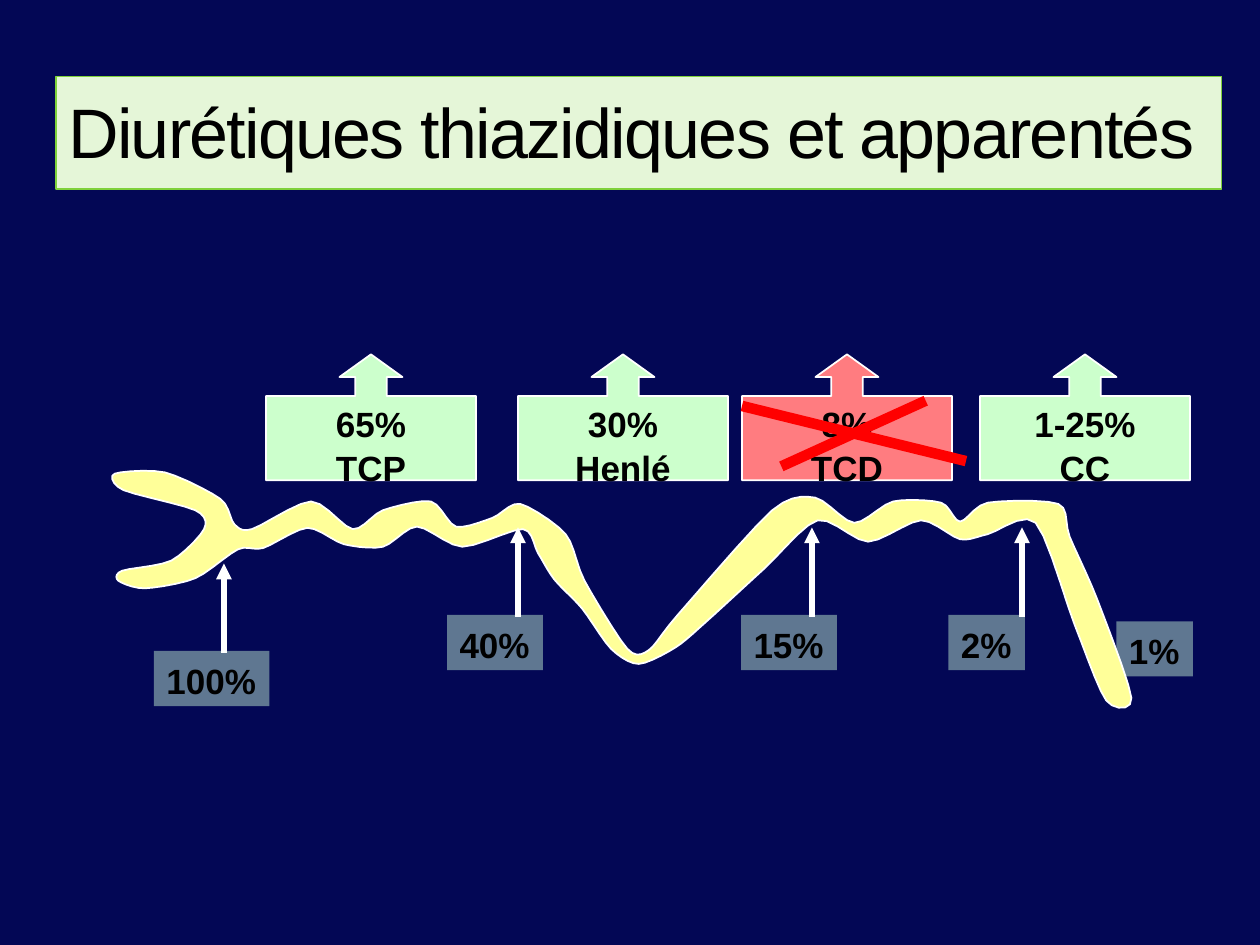
from lxml import etree
from pptx import Presentation
from pptx.dml.color import RGBColor
from pptx.enum.shapes import MSO_CONNECTOR, MSO_SHAPE
from pptx.enum.text import MSO_ANCHOR, PP_ALIGN
from pptx.oxml.ns import qn
from pptx.util import Pt

RECTANGLE = MSO_SHAPE.RECTANGLE
CALLOUT = MSO_SHAPE.UP_ARROW_CALLOUT
STRAIGHT = MSO_CONNECTOR.STRAIGHT
LEFT, CENTER = PP_ALIGN.LEFT, PP_ALIGN.CENTER
TOP = MSO_ANCHOR.TOP

COLORS = {
    "background": "030755", "reabsorbed": "CCFFCC", "blocked": "FF7C80",
    "label": "5F7791", "tubule": "FFFF99", "white": "FFFFFF", "cross": "FF0000",
    "text": "000000", "title": "E5F6D8", "title_line": "7FD13B",
}
TITLE = "Diurétiques thiazidiques et apparentés"
SEGMENTS = [
    (152, ["65%", "TCP"], "reabsorbed"),
    (296, ["30%", "Henlé"], "reabsorbed"),
    (424, ["8%", "TCD"], "blocked"),
    (560, ["1-25%", "CC"], "reabsorbed"),
]
REMAINING = [
    ("100%", 88, 372, 128), ("40%", 255.5, 351.4, 296), ("15%", 423.5, 351.4, 464),
    ("2%", 542, 351.4, 584), ("1%", 638, 355, None),
]
CROSS = [(424, 232, 552, 263.5), (446.5, 266.5, 529, 229)]
SEGMENT_WIDTH = 120
ARROW_LENGTH = 50

TUBULE_UNIT = 0.72
TUBULE = [
    (97, 453), (94, 461), (115, 467), (155, 459), (189, 436), (209, 435), (244, 419),
    (273, 432), (304, 434), (331, 418), (367, 434), (415, 420), (427, 439),
    (440, 460), (462, 483), (485, 515), (507, 527), (536, 514), (560, 494),
    (607, 451), (649, 413), (689, 430), (731, 413), (762, 428), (784, 424),
    (822, 415), (853, 496), (878, 556), (898, 554),
    (871, 476), (849, 426), (840, 400), (784, 399), (762, 414), (747, 399),
    (709, 398), (678, 415), (647, 395), (613, 405), (538, 488), (515, 516),
    (498, 515), (464, 461), (449, 424), (413, 400), (391, 411), (362, 418),
    (342, 398), (304, 405), (280, 420), (247, 398), (200, 420), (186, 416),
    (175, 396), (131, 375), (91, 376), (98, 389), (155, 405), (162, 420), (136, 445),
]
CURVE_STEPS = 5
TENSION = 0.4


def color(name):
    return RGBColor.from_string(COLORS[name])


def paint(shape, fill, line=None, width=1):
    shape.shadow.inherit = False
    shape.fill.solid()
    shape.fill.fore_color.rgb = color(fill)
    if line:
        shape.line.color.rgb = color(line)
        shape.line.width = Pt(width)
    else:
        shape.line.fill.background()


def write(shape, lines, size=20, bold=True, align=LEFT, wrap=False,
          spacing=1.05, top=3.6, tracking=0):
    frame = shape.text_frame
    frame.word_wrap = wrap
    frame.vertical_anchor = TOP
    frame.margin_top = Pt(top)
    for index, text in enumerate(lines):
        paragraph = frame.add_paragraph() if index else frame.paragraphs[0]
        paragraph.alignment = align
        paragraph.line_spacing = spacing
        run = paragraph.add_run()
        run.text = text
        run.font.name = "Arial"
        run.font.size = Pt(size)
        run.font.bold = bold
        run.font.color.rgb = color("text")
        if tracking:
            run.font._element.set("spc", str(tracking * 100))


def add_box(shapes, kind, left, top, width, height):
    return shapes.add_shape(kind, Pt(left), Pt(top), Pt(width), Pt(height))


def add_line(shapes, start_x, start_y, end_x, end_y, name, width, arrow=False):
    line = shapes.add_connector(STRAIGHT, Pt(start_x), Pt(start_y), Pt(end_x), Pt(end_y))
    line.line.color.rgb = color(name)
    line.line.width = Pt(width)
    if arrow:
        etree.SubElement(line.line._get_or_add_ln(), qn("a:tailEnd"), type="triangle")
    etree.SubElement(line._element.spPr, qn("a:effectLst"))


def smooth_outline(points):
    outline = []
    count = len(points)
    for index in range(count):
        corners = [points[(index + k) % count] for k in (-1, 0, 1, 2)]
        for step in range(CURVE_STEPS):
            t = step / CURVE_STEPS
            ease = t * t * (3 - 2 * t)
            leave = TENSION * t * (1 - t) ** 2
            arrive = TENSION * t * t * (1 - t)
            weights = (-leave, 1 - ease + arrive, ease + leave, -arrive)
            outline.append(tuple(
                Pt(TUBULE_UNIT * sum(w * p[axis] for w, p in zip(weights, corners)))
                for axis in (0, 1)))
    return outline


def add_tubule(shapes):
    outline = smooth_outline(TUBULE)
    builder = shapes.build_freeform(*outline[0])
    builder.add_line_segments(outline[1:], close=True)
    paint(builder.convert_to_shape(), "tubule", "white")


def main():
    presentation = Presentation()
    presentation.slide_width, presentation.slide_height = Pt(720), Pt(540)
    slide = presentation.slides.add_slide(presentation.slide_layouts[6])
    slide.background.fill.solid()
    slide.background.fill.fore_color.rgb = color("background")
    shapes = slide.shapes

    for left, lines, fill in SEGMENTS:
        callout = add_box(shapes, CALLOUT, left, 202.5, SEGMENT_WIDTH, 72)
        for index, value in enumerate((0.25, 0.25, 0.18, 0.67)):
            callout.adjustments[index] = value
        paint(callout, fill, "white")
        box = shapes.add_textbox(Pt(left), Pt(225.5), Pt(SEGMENT_WIDTH), Pt(55.5))
        write(box, lines, align=CENTER)
    for text, left, top, _ in REMAINING:
        label = add_box(shapes, RECTANGLE, left, top, 21.5 + 11.1 * len(text), 31.5)
        paint(label, "label")
        write(label, [text])

    add_tubule(shapes)
    for _, _, top, x in REMAINING:
        if x:
            add_line(shapes, x, top + 1, x, top - ARROW_LENGTH, "white", 3, arrow=True)
    for stroke in CROSS:
        add_line(shapes, *stroke, "cross", 6)

    title = add_box(shapes, RECTANGLE, 32, 43.5, 666, 64.5)
    paint(title, "title", "title_line", 0.75)
    write(title, [TITLE], size=40, bold=False, wrap=True, spacing=1.0, top=7.2, tracking=-1)
    presentation.save("out.pptx")


if __name__ == "__main__":
    main()
